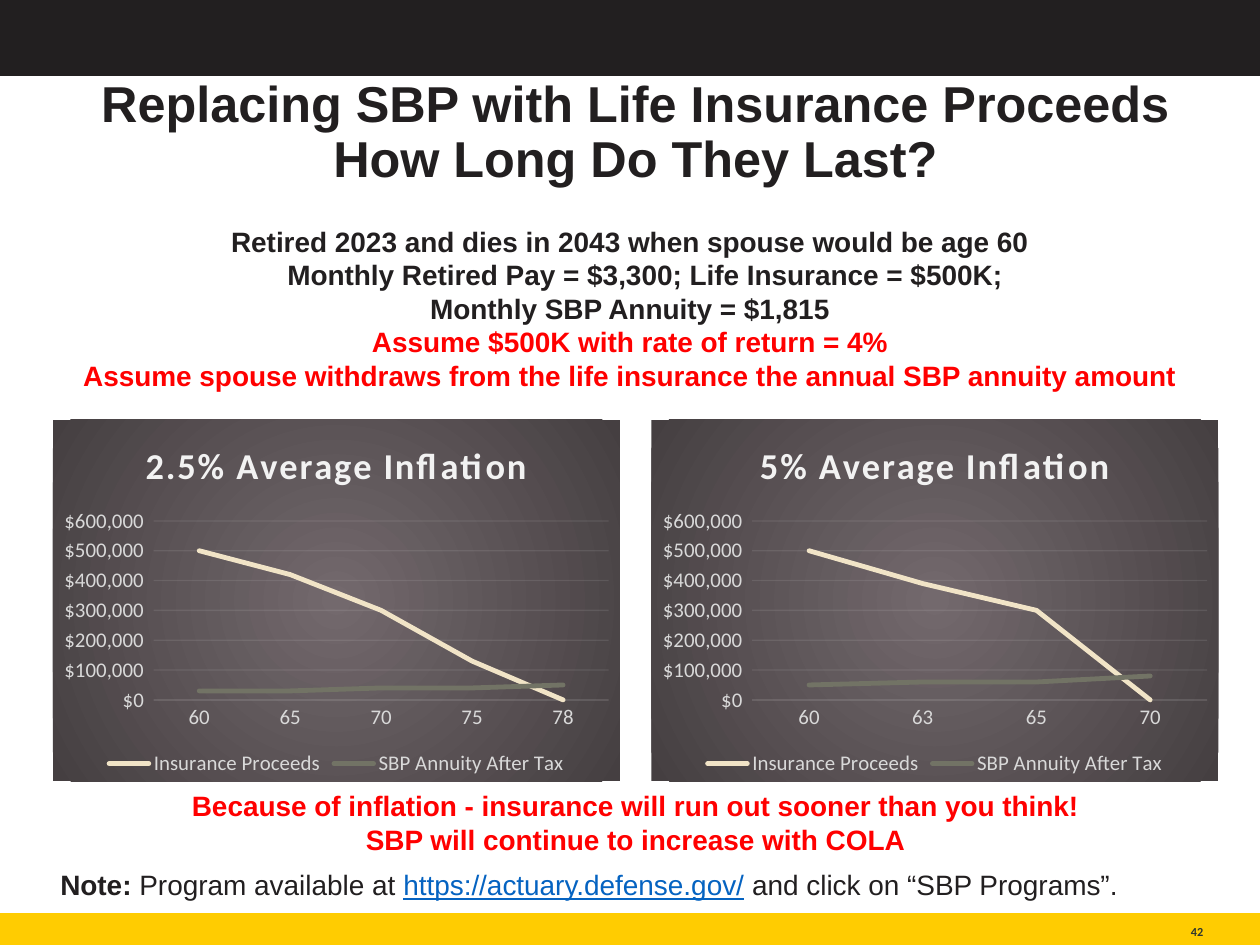
from lxml.etree import SubElement
from pptx import Presentation
from pptx.chart.data import CategoryChartData
from pptx.dml.color import RGBColor
from pptx.enum.chart import XL_CHART_TYPE, XL_LEGEND_POSITION, XL_MARKER_STYLE, XL_TICK_MARK
from pptx.enum.shapes import MSO_SHAPE
from pptx.enum.text import MSO_ANCHOR, PP_ALIGN
from pptx.oxml import parse_xml
from pptx.oxml.ns import nsdecls, qn
from pptx.util import Inches, Pt

INK, RED, LINK = "221F20", "FF0000", "0563C1"
GRADIENT = f"""<c:spPr {nsdecls("c", "a")}><a:gradFill><a:gsLst>
<a:gs pos="0"><a:srgbClr val="73696D"/></a:gs>
<a:gs pos="100000"><a:srgbClr val="453F41"/></a:gs></a:gsLst>
<a:path path="circle"><a:fillToRect l="50000" t="50000" r="50000" b="50000"/></a:path>
</a:gradFill><a:ln><a:noFill/></a:ln></c:spPr>"""


def color(value):
    return RGBColor.from_string(value)


def style(font, fill, **values):
    for name, value in {"name": "Arial", "size": Pt(16), "bold": True, **values}.items():
        setattr(font, name, value)
    font.color.rgb = color(fill)


deck = Presentation()
deck.slide_width, deck.slide_height = Inches(10), Inches(7.5)
page = deck.slides.add_slide(deck.slide_layouts[5])

for top, height, fill in [(0.01, 0.59, INK), (7.25, 0.27, "FFCC01")]:
    band = page.shapes.add_shape(
        MSO_SHAPE.RECTANGLE, Inches(0), Inches(top), Inches(10), Inches(height))
    band.shadow.inherit = False
    band.fill.solid()
    band.fill.fore_color.rgb = color(fill)
    band.line.color.rgb = color(fill)
    band.line.width = Pt(1)

title = page.shapes.title
title.left, title.top, title.width, title.height = map(Inches, (0.42, 0.6, 9.25, 0.92))
title.text_frame.text = "Replacing SBP with Life Insurance Proceeds\vHow Long Do They Last?"
title.text_frame.vertical_anchor = MSO_ANCHOR.MIDDLE
heading = title.text_frame.paragraphs[0]
heading.alignment = PP_ALIGN.CENTER
heading.line_spacing = 0.9
for span in heading.runs:
    style(span.font, INK, size=Pt(28.8))

pay_line = "Monthly Retired Pay = $3,300; Life Insurance = $500K;"
text_boxes = [
    ((0.25, 1.73, 9.5, 1.45), PP_ALIGN.CENTER, [
        [("Retired 2023 and dies in 2043 when spouse would be age 60", INK, {})],
        [(pay_line, INK, {})],
        [("Monthly SBP Annuity = $1,815", INK, {})],
        [("Assume $500K with rate of return = 4%", RED, {})],
        [("Assume spouse withdraws from the life insurance the annual SBP annuity amount",
          RED, {})],
    ]),
    ((0.42, 6.21, 9.25, 0.64), PP_ALIGN.CENTER, [
        [("Because of inflation - insurance will run out sooner than you think!", RED, {})],
        [("SBP will continue to increase with COLA", RED, {})],
    ]),
    ((0.38, 6.84, 9.29, 0.37), PP_ALIGN.LEFT, [[
        ("Note: ", INK, {}),
        ("Program available at ", INK, {"bold": False}),
        ("https://actuary.defense.gov/", LINK, {"bold": False, "underline": True}),
        (" and click on “SBP Programs”.", INK, {"bold": False}),
    ]]),
    ((8.68, 7.25, 0.87, 0.2), PP_ALIGN.RIGHT, [
        [("42", "2F372F", {"name": "Calibri", "size": Pt(7)})],
    ]),
]
for place, alignment, lines in text_boxes:
    box = page.shapes.add_textbox(*map(Inches, place))
    frame = box.text_frame
    frame.word_wrap = True
    for index, spans in enumerate(lines):
        para = frame.paragraphs[0] if index == 0 else frame.add_paragraph()
        para.alignment = alignment
        for text, fill, values in spans:
            span = para.add_run()
            span.text = text
            style(span.font, fill, **values)
        if para.text == pay_line:
            para._p.get_or_add_pPr().set("marL", str(Inches(0.24)))

number_frame = frame
number_frame.vertical_anchor = MSO_ANCHOR.BOTTOM
for side in ("left", "top", "right", "bottom"):
    setattr(number_frame, f"margin_{side}", 0)

charts = [
    (0.42, "2.5% Average Inflation", ["60", "65", "70", "75", "78"],
     [500000, 420000, 300000, 130000, 0], [30000, 30000, 40000, 40000, 50000]),
    (5.17, "5% Average Inflation", ["60", "63", "65", "70"],
     [500000, 390000, 300000, 0], [50000, 60000, 60000, 80000]),
]
for left, name, ages, proceeds, annuity in charts:
    data = CategoryChartData()
    data.categories = ages
    data.add_series("Insurance Proceeds", proceeds)
    data.add_series("SBP Annuity After Tax", annuity)
    chart = page.shapes.add_chart(
        XL_CHART_TYPE.LINE, Inches(left), Inches(3.33), Inches(4.5), Inches(2.87), data).chart
    style(chart.font, INK, name="Calibri", size=Pt(10), bold=False)
    chart._chartSpace.find(qn("c:chart")).addnext(parse_xml(GRADIENT))

    chart.has_title = True
    chart.chart_title.include_in_layout = False
    chart.chart_title.text_frame.text = name
    span = chart.chart_title.text_frame.paragraphs[0].runs[0]
    style(span.font, "F2F2F2", name="Calibri", size=Pt(20.8))
    span._r.get_or_add_rPr().set("spc", "100")

    chart.has_legend = True
    chart.legend.position = XL_LEGEND_POSITION.BOTTOM
    chart.legend.include_in_layout = False
    ages_axis, dollars_axis = chart.category_axis, chart.value_axis
    for font in (chart.legend.font, ages_axis.tick_labels.font, dollars_axis.tick_labels.font):
        style(font, "D9D9D9", name="Calibri", size=Pt(11.9), bold=False)
    for axis in (ages_axis, dollars_axis):
        axis.major_tick_mark = axis.minor_tick_mark = XL_TICK_MARK.NONE

    dollars_axis.minimum_scale, dollars_axis.maximum_scale = 0, 600000
    dollars_axis.major_unit = 100000
    dollars_axis.tick_labels.number_format = '"$"#,##0_);[Red]\\("$"#,##0\\)'
    dollars_axis.tick_labels.number_format_is_linked = False
    dollars_axis.format.line.fill.background()
    for line in (ages_axis.format.line, dollars_axis.major_gridlines.format.line):
        line.width = Pt(0.75)
        line.color.rgb = color("F2F2F2")
        for shade in line._ln.iter(qn("a:srgbClr")):
            SubElement(shade, qn("a:alpha")).set("val", "10000")

    plot = chart.plots[0]
    plot.vary_by_categories = False
    for series, stroke in zip(plot.series, ("F1E4C7", "727365")):
        series.smooth = False
        series.marker.style = XL_MARKER_STYLE.NONE
        series.format.line.color.rgb = color(stroke)
        series.format.line.width = Pt(2.75)
        series.format.line._ln.set("cap", "rnd")

deck.save("out.pptx")
